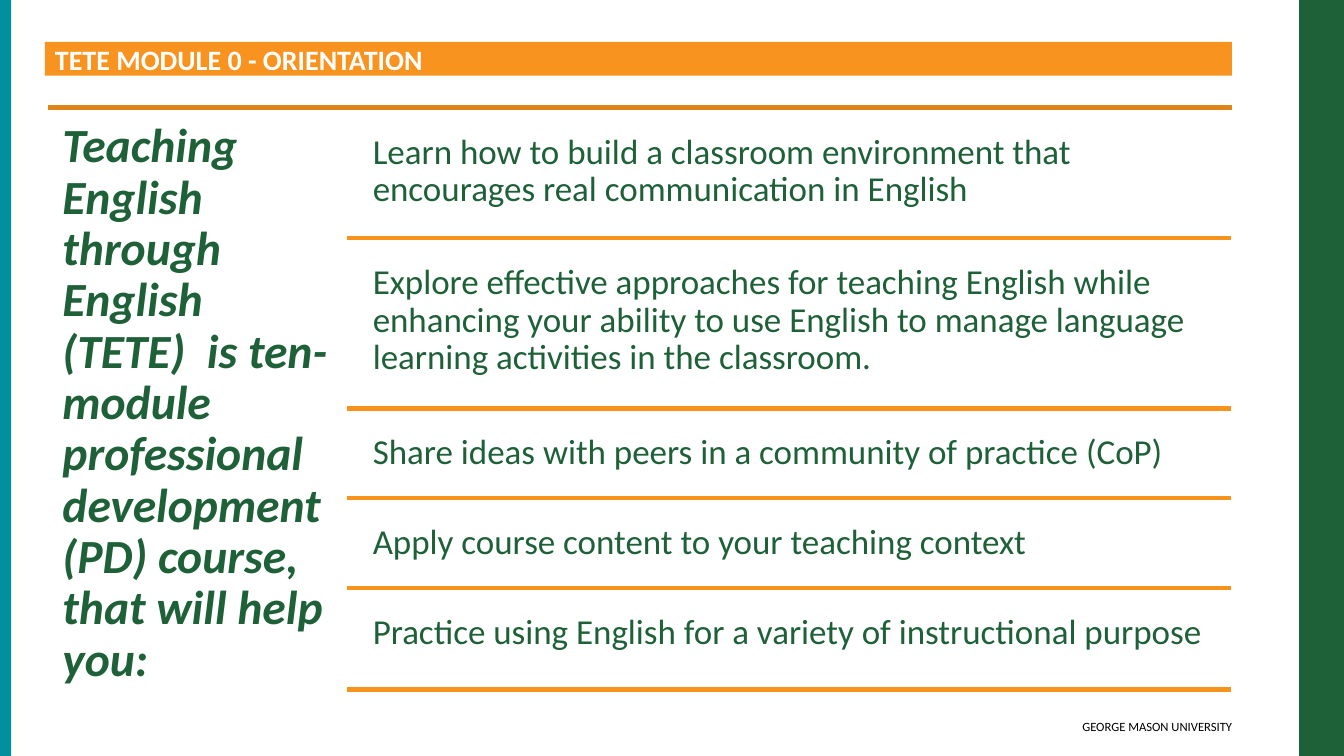
import pptx
import pptx.dml.color
import pptx.enum.shapes
import pptx.enum.text
import pptx.oxml.ns
import pptx.util
from lxml import etree

Pt = pptx.util.Pt
Anchor = pptx.enum.text.MSO_ANCHOR
Align = pptx.enum.text.PP_ALIGN
GREEN, TEAL, ORANGE = "1E6138", "00909E", "F7931E"


def color(hex_value):
    return pptx.dml.color.RGBColor.from_string(hex_value)


def write(shape, text, size, hex_value, insets, bold=False, italic=False,
          align=Align.LEFT, anchor=Anchor.TOP, spacing=None):
    """Fill a shape with one paragraph; insets are left, top, right, bottom."""
    frame = shape.text_frame
    frame.word_wrap = True
    frame.auto_size = pptx.enum.text.MSO_AUTO_SIZE.NONE
    frame.vertical_anchor = anchor
    (frame.margin_left, frame.margin_top,
     frame.margin_right, frame.margin_bottom) = [Pt(inset) for inset in insets]
    frame.text = text
    paragraph = frame.paragraphs[0]
    paragraph.alignment = align
    paragraph.line_spacing = spacing
    font = paragraph.runs[0].font
    font.name, font.size, font.bold, font.italic = "Calibri", Pt(size), bold, italic
    font.color.rgb = color(hex_value)


deck = pptx.Presentation()
deck.slide_width, deck.slide_height = Pt(960), Pt(540)
slide = deck.slides.add_slide(deck.slide_layouts[5])
shapes = slide.shapes

# Side bands
for left, width, fill in [(928, 32, GREEN), (0, 8, TEAL)]:
    band = shapes.add_shape(pptx.enum.shapes.MSO_SHAPE.RECTANGLE,
                            Pt(left), Pt(0), Pt(width), Pt(540))
    band.shadow.inherit = False
    band.fill.solid()
    band.fill.fore_color.rgb = color(fill)
    band.line.fill.background()

university = shapes.add_textbox(Pt(488), Pt(510), Pt(392), Pt(24))
write(university, "GEORGE MASON UNIVERSITY", 9, "000000", (7.2, 3.6, 0, 3.6),
      align=Align.RIGHT)

# Title bar
title = shapes.title
title.left, title.top, title.width, title.height = Pt(32), Pt(30), Pt(848), Pt(24)
title.fill.solid()
title.fill.fore_color.rgb = color(ORANGE)
write(title, "TETE MODULE 0 - ORIENTATION", 20, "FFFFFF", (7.2, 0, 7.2, 0),
      bold=True, anchor=Anchor.MIDDLE)

# Introduction on the left
intro = shapes.add_textbox(Pt(34.6), Pt(77), Pt(212.4), Pt(427))
write(intro, "Teaching English through English (TETE)  is ten-module professional "
      "development (PD) course, that will help you:", 34, GREEN, (10, 10, 10, 10),
      bold=True, italic=True, spacing=0.9)
intro.text_frame.auto_size = pptx.enum.text.MSO_AUTO_SIZE.TEXT_TO_FIT_SHAPE

# Goals, each closed by a rule
goals = [
    ("Learn how to build a classroom environment that encourages real "
     "communication in English", 170),
    ("Explore effective approaches for teaching English while enhancing your "
     "ability to use English to manage language learning activities in the "
     "classroom.", 291.8),
    ("Share ideas with peers in a community of practice (CoP)", 355.8),
    ("Apply course content to your teaching context", 420),
    ("Practice using English for a variety of instructional purpose", 492.3),
]
top_rule = 77
rules = [(34.6, 880, top_rule, "DF8418")]
previous = top_rule
for goal, bottom in goals:
    goal_top = previous + 11.5
    goal_box = shapes.add_textbox(Pt(259.2), Pt(goal_top), Pt(620), Pt(bottom - goal_top))
    write(goal_box, goal, 25, GREEN, (7.2, 7.2, 7.2, 7.2), spacing=0.9)
    rules.append((247.7, 879.2, bottom, "F7931B"))
    previous = bottom

for start, end, y, hex_value in rules:
    rule = shapes.add_connector(pptx.enum.shapes.MSO_CONNECTOR.STRAIGHT,
                                Pt(start), Pt(y), Pt(end), Pt(y))
    rule.line.color.rgb = color(hex_value)
    rule.line.width = Pt(3.35)
    etree.SubElement(rule._element.spPr, pptx.oxml.ns.qn("a:effectLst"))

deck.save("out.pptx")
